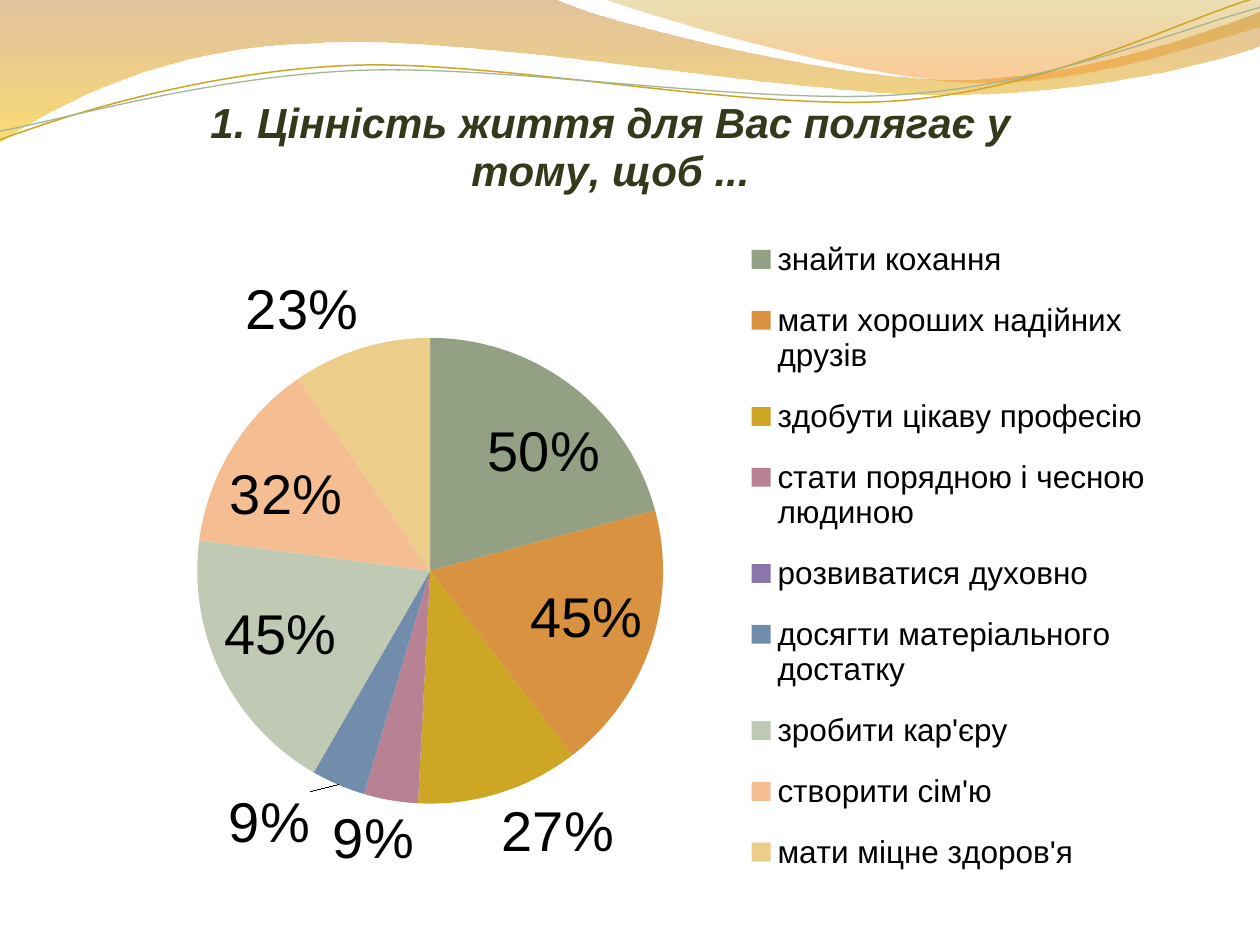
from lxml import etree
from pptx import Presentation
from pptx import util as u
from pptx.chart import data
from pptx.dml import color
from pptx.enum import chart as kinds
from pptx.oxml import ns, parse_xml

TITLE = "1. Цінність життя для Вас полягає у тому, щоб ..."
VALUES = [
    ("знайти кохання", 0.5, "93A083"),
    ("мати хороших надійних друзів", 0.45, "D89240"),
    ("здобути цікаву професію", 0.27, "CCA624"),
    ("стати порядною і чесною людиною", 0.09, "B98194"),
    ("розвиватися духовно", 0, "8B76AC"),
    ("досягти матеріального достатку", 0.09, "728DAC"),
    ("зробити кар'єру", 0.45, "C0C9B3"),
    ("створити сім'ю", 0.32, "F5BE92"),
    ("мати міцне здоров'я", 0.23, "ECCE8A"),
]
BANDS = [
    ([(0, 0), (4.4, -0.01),
      (4.76, 0.17, 6.64, 0.63, 7.58, 0.63), (8.53, 0.63, 9.58, 0.26, 10, 0.09),
      (10.01, 0.36),
      (9.83, 0.44, 8.7, 0.76, 7.46, 0.75), (6.22, 0.75, 3.82, 0.28, 2.57, 0.34),
      (1.29, 0.36, 0.46, 0.83, -0.01, 1.13)],
     [(0, "C07A28", 45), (100, "F7BF00", 55)]),
    ([(4.79, -0.01),
      (5.09, 0.11, 6.82, 0.62, 7.69, 0.65), (8.56, 0.69, 9.61, 0.32, 10, 0.21),
      (10, 0)],
     [(0, "C09709", 30), (80, "F59320", 45)]),
]
WAVES = [
    ([(0, 1.11), (0.48, 0.93, 1.58, 0.57, 2.77, 0.52),
      (3.95, 0.47, 5.93, 0.89, 7.13, 0.8), (8.33, 0.71, 9.38, 0.15, 9.98, -0.02)],
     "CCA624", 0.85),
    ([(0, 1.04), (0.47, 0.96, 1.64, 0.61, 2.83, 0.56),
      (4.03, 0.51, 5.97, 0.84, 7.17, 0.75), (8.36, 0.67, 9.41, 0.21, 10, 0.06)],
     "A5B592", 0.75),
]
CHART_BOX = (0.39, 0.7, 8.91, 6.52)
TITLE_SPOT = (1.61, 0.62)
PIE_BOX = (1.57, 2.68, 3.7, 3.7)
LEGEND_BOX = (5.88, 1.72, 3.3, 5.39)


def rgb(value):
    return color.RGBColor.from_string(value)


def style(target, formats):
    for name, value in formats.items():
        setattr(target, name, value)


def add_outline(page, segments, close):
    points = [(u.Inches(x), u.Inches(y))
              for segment in segments for x, y in zip(segment[::2], segment[1::2])]
    builder = page.shapes.build_freeform(*points[0])
    builder.add_line_segments(points[1:], close=close)
    shape = builder.convert_to_shape()
    shape.shadow.inherit = False
    lines = iter(list(shape.element.iter(ns.qn("a:lnTo"))))
    for segment in segments[1:]:
        parts = [next(lines) for _ in segment[::2]]
        if len(parts) == 3:
            curve = etree.Element(ns.qn("a:cubicBezTo"))
            parts[0].addprevious(curve)
            for part in parts:
                curve.append(part[0])
                part.getparent().remove(part)
    return shape


def add_band(page, segments, stops):
    shape = add_outline(page, segments, True)
    shape.line.fill.background()
    marks = "".join(
        f'<a:gs pos="{place * 1000}"><a:srgbClr val="{tone}">'
        f'<a:alpha val="{alpha * 1000}"/></a:srgbClr></a:gs>'
        for place, tone, alpha in stops)
    gradient = parse_xml(f'<a:gradFill {ns.nsdecls("a")}><a:gsLst>{marks}</a:gsLst>'
                         '<a:lin ang="5400000" scaled="0"/></a:gradFill>')
    shape.element.spPr.find(ns.qn("a:custGeom")).addnext(gradient)


def add_wave(page, segments, tone, width):
    shape = add_outline(page, segments, False)
    shape.fill.background()
    shape.line.color.rgb = rgb(tone)
    shape.line.width = u.Pt(width)


def place(element, after, box, inner=False):
    for old in element.findall(ns.qn("c:layout")):
        element.remove(old)
    left, top, width, height = CHART_BOX
    shares = ((box[0] - left) / width, (box[1] - top) / height,
              *(size / whole for size, whole in zip(box[2:], (width, height))))
    settings = {"layoutTarget": "inner"} if inner else {}
    settings.update(xMode="edge", yMode="edge")
    settings.update({name: f"{share:.3f}" for name, share in zip("xywh", shares)})
    layout = etree.Element(ns.qn("c:layout"))
    manual = etree.SubElement(layout, ns.qn("c:manualLayout"))
    for name, value in settings.items():
        etree.SubElement(manual, ns.qn(f"c:{name}")).set("val", value)
    if after:
        element.find(ns.qn(after)).addnext(layout)
    else:
        element.insert(0, layout)


def add_pie(page):
    source = data.CategoryChartData(number_format="0%")
    source.categories = [name for name, _, _ in VALUES]
    source.add_series("Series 1", [value for _, value, _ in VALUES])
    frame = page.shapes.add_chart(kinds.XL_CHART_TYPE.PIE, *map(u.Inches, CHART_BOX), source)
    chart = frame.chart
    style(chart.font, {"name": "Arial", "size": u.Pt(10)})
    chart.font.color.rgb = rgb("000000")

    chart.has_title = True
    span = chart.chart_title.text_frame.paragraphs[0].add_run()
    span.text = TITLE
    style(span.font, {"name": "Arial", "size": u.Pt(24), "bold": True, "italic": True})
    span.font.color.rgb = rgb("333A1C")

    chart.has_legend = True
    style(chart.legend, {"position": kinds.XL_LEGEND_POSITION.RIGHT,
                         "include_in_layout": False})
    style(chart.legend.font, {"name": "Arial", "size": u.Pt(18)})

    plot = chart.plots[0]
    plot.vary_by_categories = True
    for index, (_, _, tone) in enumerate(VALUES):
        point = plot.series[0].points[index]
        point.format.fill.solid()
        point.format.fill.fore_color.rgb = rgb(tone)
        point.format.line.fill.background()
    labels = plot.series[0].data_labels
    style(labels, {"show_value": True, "number_format": "0%;;",
                   "number_format_is_linked": False,
                   "position": kinds.XL_LABEL_POSITION.BEST_FIT})
    style(labels.font, {"name": "Arial", "size": u.Pt(32)})
    labels.font.color.rgb = rgb("000000")

    body = chart.element.find(ns.qn("c:chart"))
    place(body.find(ns.qn("c:title")), "c:tx", TITLE_SPOT)
    place(body.find(ns.qn("c:plotArea")), None, PIE_BOX, inner=True)
    place(body.find(ns.qn("c:legend")), "c:legendPos", LEGEND_BOX)


def main():
    deck = Presentation()
    style(deck, {"slide_width": u.Inches(10), "slide_height": u.Inches(7.5)})
    page = deck.slides.add_slide(deck.slide_layouts[6])
    for band in BANDS:
        add_band(page, *band)
    for wave in WAVES:
        add_wave(page, *wave)
    add_pie(page)
    deck.save("out.pptx")


if __name__ == "__main__":
    main()
